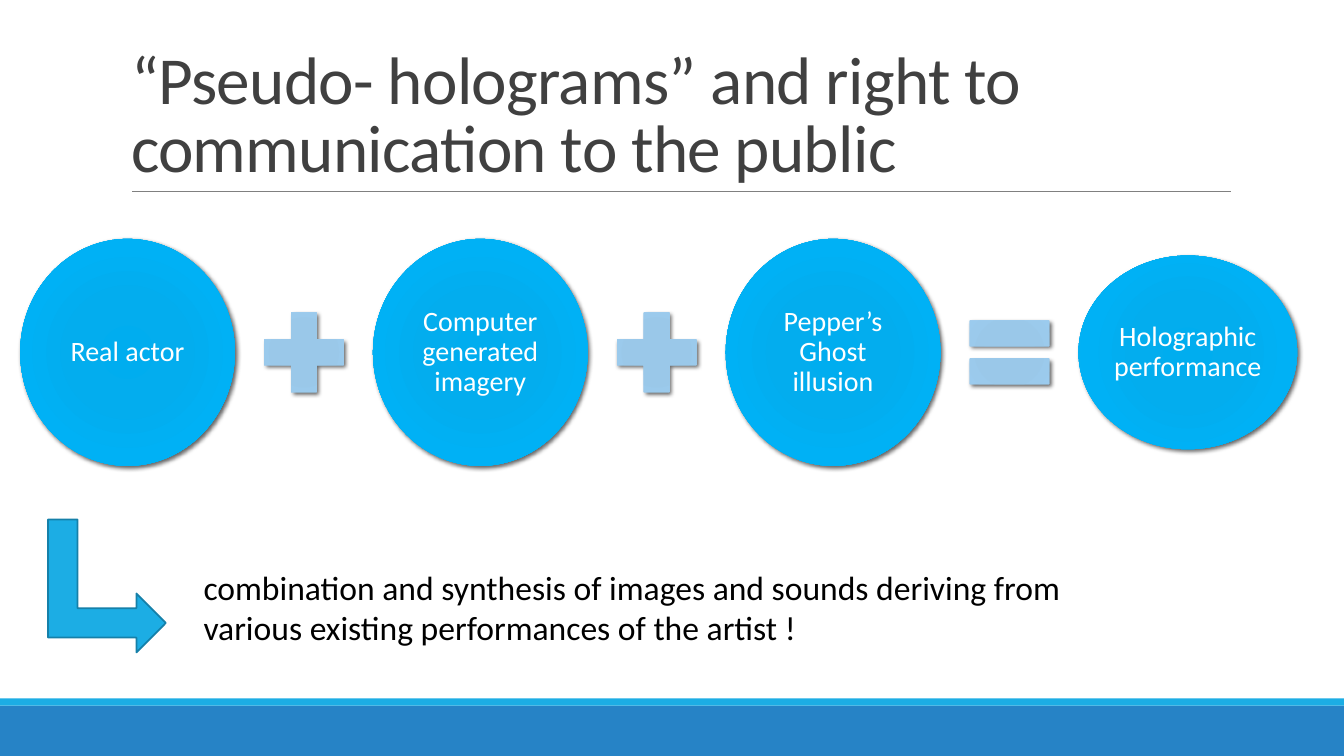
from lxml import etree
from pptx import Presentation
from pptx import util as u
from pptx.dml.color import RGBColor
from pptx.enum import shapes, text
from pptx.oxml import parse_xml
from pptx.oxml.ns import nsdecls, qn

COLOURS = {
    "band": "2683C6", "accent": "1CADE4", "arrow_line": "1580A9", "rule": "808080",
    "title": "404040", "body": "000000", "light": "FFFFFF",
}
GRADIENTS = {
    "term": {0: "00ADEF", 34: "03ADEE", 70: "00B1F5", 100: "12B1EE"},
    "operator": {0: "97C6E8", 34: "9AC8E9", 70: "9BCBEE", 100: "A9D3F3"},
}
SHAPE = shapes.MSO_SHAPE
TERMS = ["Real actor", "Computer generated imagery", "Pepper’s Ghost illusion",
         "Holographic performance"]
OPERATORS = [SHAPE.MATH_PLUS, SHAPE.MATH_PLUS, SHAPE.MATH_EQUAL]
TERM_SIZES = [(5.41, 5.72)] * 3 + [(5.51, 4.88)]
OPERATOR_SIZE = 2.72
ROW_LEFT, ROW_MIDDLE, PITCH, OPERATOR_OFFSET = 0.51, 8.88, 8.89, 5.79


def rgb(name):
    return RGBColor.from_string(COLOURS[name])


def set_attrs(obj, values):
    for name, value in values.items():
        setattr(obj, name, value)


def box(*lengths):
    return [u.Cm(length) for length in lengths]


def write(tf, words, size, colour, frame, para):
    set_attrs(tf, {"word_wrap": True, **frame})
    p = tf.paragraphs[0]
    set_attrs(p, para)
    r = p.add_run()
    r.text = words
    set_attrs(r.font, {"name": "Calibri", "size": u.Pt(size)})
    r.font.color.rgb = rgb(colour)
    return r


def add_plain(slide, kind, place, fill):
    sp = slide.shapes.add_shape(kind, *box(*place))
    sp.shadow.inherit = False
    sp.fill.solid()
    sp.fill.fore_color.rgb = rgb(fill)
    sp.line.fill.background()
    return sp


def add_glossy(slide, kind, place, gradient):
    sp = add_plain(slide, kind, place, "accent")
    stops = "".join(f'<a:gs pos="{pos * 1000}"><a:srgbClr val="{colour}"/></a:gs>'
                    for pos, colour in GRADIENTS[gradient].items())
    spPr = sp._element.spPr
    spPr.replace(spPr.find(qn("a:solidFill")), parse_xml(
        f'<a:gradFill {nsdecls("a")} rotWithShape="1"><a:gsLst>{stops}</a:gsLst>'
        '<a:path path="circle"><a:fillToRect l="100000" t="100000" r="100000" b="100000"/>'
        '</a:path></a:gradFill>'))
    spPr.find(qn("a:effectLst")).append(parse_xml(
        f'<a:outerShdw {nsdecls("a")} blurRad="38100" dist="25400" dir="2700000" '
        'rotWithShape="0"><a:srgbClr val="000000"><a:alpha val="60000"/></a:srgbClr>'
        '</a:outerShdw>'))
    return sp


def add_term(slide, index):
    width, height = TERM_SIZES[index]
    place = (ROW_LEFT + index * PITCH, ROW_MIDDLE - height / 2, width, height)
    sp = add_glossy(slide, SHAPE.OVAL, place, "term")
    margins = {f"margin_{side}": u.Cm(0.07) for side in ("left", "top", "right", "bottom")}
    write(sp.text_frame, TERMS[index], 20, "light",
          {"vertical_anchor": text.MSO_ANCHOR.MIDDLE, **margins},
          {"alignment": text.PP_ALIGN.CENTER, "line_spacing": 0.9})


def add_operator(slide, index):
    left = ROW_LEFT + index * PITCH + OPERATOR_OFFSET
    add_glossy(slide, OPERATORS[index],
               (left, ROW_MIDDLE - OPERATOR_SIZE / 2, OPERATOR_SIZE, OPERATOR_SIZE), "operator")


def add_rule(slide, left, right, top):
    c = slide.shapes.add_connector(shapes.MSO_CONNECTOR.STRAIGHT, *box(left, top, right, top))
    c.line.color.rgb = rgb("rule")
    c.line.width = u.Pt(0.5)
    etree.SubElement(c._element.spPr, qn("a:effectLst"))


def add_title(slide, words, place):
    sp = slide.shapes.title
    set_attrs(sp, dict(zip(("left", "top", "width", "height"), box(*place))))
    r = write(sp.text_frame, words, 48, "title",
              {"vertical_anchor": text.MSO_ANCHOR.BOTTOM, "auto_size": text.MSO_AUTO_SIZE.NONE},
              {"alignment": text.PP_ALIGN.LEFT, "line_spacing": 0.85})
    r.font._element.set("spc", "-50")


def add_arrow(slide, place):
    sp = add_plain(slide, SHAPE.BENT_UP_ARROW, place, "accent")
    sp.rotation = 90
    sp.line.color.rgb = rgb("arrow_line")
    sp.line.width = u.Pt(1.25)


def add_note(slide, words, place):
    sp = slide.shapes.add_textbox(*box(*place))
    write(sp.text_frame, words, 24, "body",
          {"auto_size": text.MSO_AUTO_SIZE.SHAPE_TO_FIT_TEXT}, {})


def main():
    prs = Presentation()
    set_attrs(prs, {"slide_width": u.Cm(33.87), "slide_height": u.Cm(19.05)})
    slide = prs.slides.add_slide(prs.slide_layouts[5])
    add_plain(slide, SHAPE.RECTANGLE, (0, 17.78, 33.87, 1.27), "band")
    add_plain(slide, SHAPE.RECTANGLE, (0, 17.6, 33.87, 0.18), "accent")
    add_rule(slide, 3.33, 31.01, 4.83)
    add_title(slide, "“Pseudo- holograms” and right to communication to the public",
              (3.05, 0.79, 27.94, 4.04))
    for index in range(len(TERMS)):
        add_term(slide, index)
    for index in range(len(OPERATORS)):
        add_operator(slide, index)
    add_arrow(slide, (1.02, 13.28, 3.35, 2.97))
    add_note(slide, "combination and synthesis of images and sounds deriving from "
                    "various existing performances of the artist !", (4.88, 14.15, 23.52, 2.31))
    prs.save("out.pptx")


if __name__ == "__main__":
    main()
